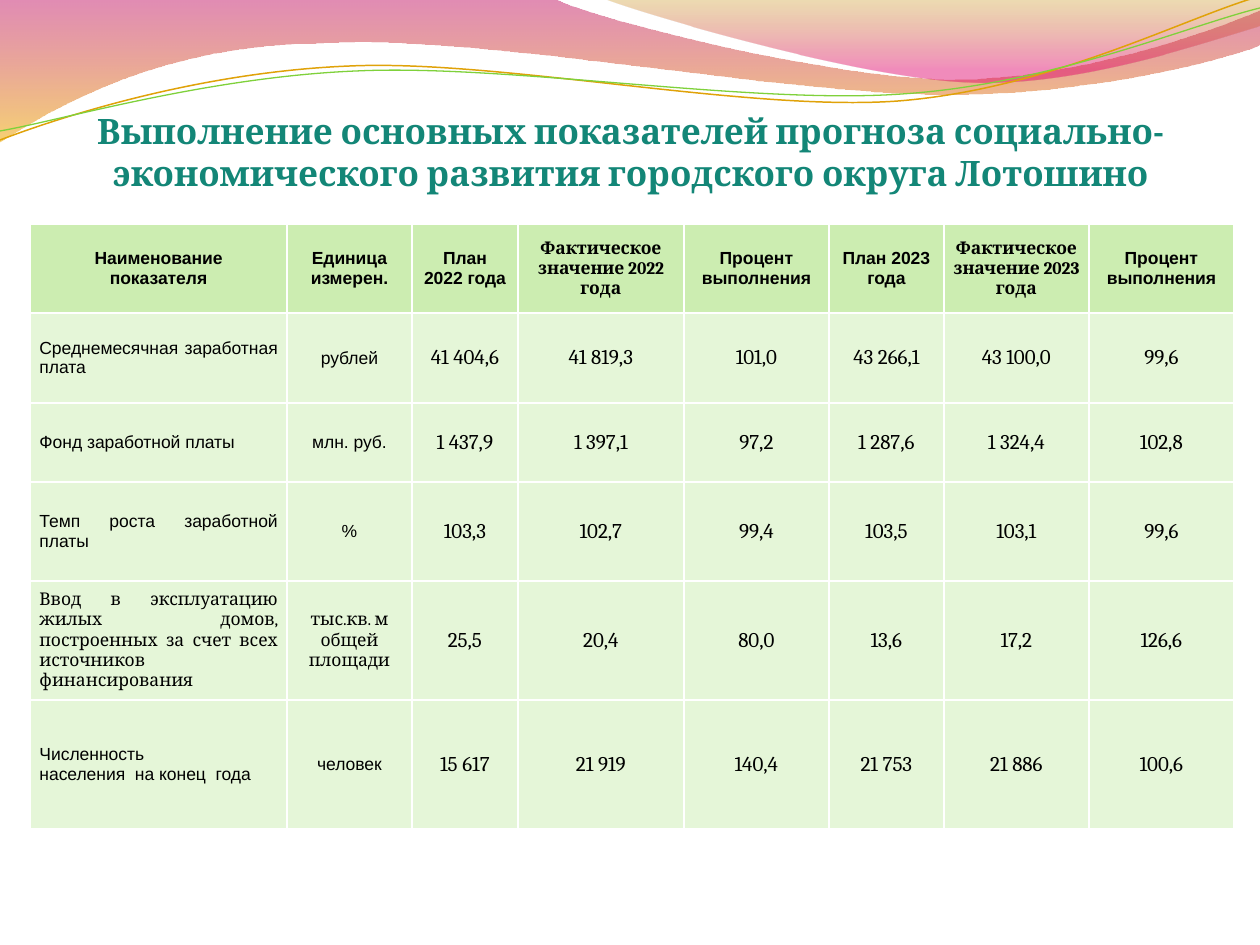
from lxml import etree
from pptx import Presentation
from pptx import util as u
from pptx.dml.color import RGBColor
from pptx.enum import text
from pptx.oxml.ns import qn

EMU_PER_PX = 914400 / 126
SERIF, SANS = "Cambria", "Arial"
CENTER, JUSTIFY = text.PP_ALIGN.CENTER, text.PP_ALIGN.JUSTIFY

# Waves: start point, then segments of one point (line) or three points (curve)
PINK_WAVE = [(0, -1), [(554, -1)],
             [(600, 21), (837, 79), (955, 79)],
             [(1075, 79), (1207, 33), (1260, 11)], [(1261, 45)],
             [(1239, 55), (1096, 96), (940, 94)],
             [(781, 94), (481, 35), (324, 43)],
             [(163, 44), (58, 105), (-1, 142)], [(0, -1)]]
GOLD_WAVE = [(604, -1),
             [(641, 14), (859, 78), (969, 82)],
             [(1079, 87), (1211, 40), (1260, 26)], [(1260, 0)], [(604, -1)]]
ORANGE_LINE = [(0, 140),
               [(60, 117), (199, 72), (349, 66)],
               [(498, 59), (747, 112), (898, 101)],
               [(1050, 89), (1182, 19), (1257, -3)]]
GREEN_LINE = [(0, 131),
              [(59, 121), (207, 77), (357, 71)],
              [(508, 64), (752, 105), (903, 94)],
              [(1053, 84), (1187, 26), (1260, 8)]]

# Table content
COLUMNS = [257, 125, 106, 166, 145, 115, 145, 145]
ROWS = [89, 90, 79, 99, 119, 129]
HEADER = ["Наименование\nпоказателя", "Единица\nизмерен.",
          "План 2022 года", "Фактическое значение 2022 года", "Процент выполнения",
          "План 2023 года", "Фактическое значение 2023 года", "Процент выполнения"]
INDICATORS = [
    ["Среднемесячная заработная плата", "рублей",
     "41 404,6", "41 819,3", "101,0", "43 266,1", "43 100,0", "99,6"],
    ["Фонд заработной платы", "млн. руб.",
     "1 437,9", "1 397,1", "97,2", "1 287,6", "1 324,4", "102,8"],
    ["Темп роста заработной платы", "%",
     "103,3", "102,7", "99,4", "103,5", "103,1", "99,6"],
    ["Ввод в эксплуатацию жилых домов, построенных за счет всех источников финансирования",
     "тыс.кв. м общей площади", "25,5", "20,4", "80,0", "13,6", "17,2", "126,6"],
    ["Численность\nнаселения  на конец  года", "человек",
     "15 617", "21 919", "140,4", "21 753", "21 886", "100,6"],
]
SERIF_LABEL_ROW = 4
ACTUAL_COLUMNS = (3, 6)


def px(value):
    return u.Emu(round(value * EMU_PER_PX))


def color(hex_code):
    return RGBColor.from_string(hex_code)


def bend_segments(wave, segments):
    """Turn each run of three points into one cubic curve."""
    outline = wave._element.find(".//" + qn("a:path"))
    steps = iter(outline.findall(qn("a:lnTo")))
    for segment in segments:
        first = next(steps)
        if len(segment) == 3:
            curve = etree.Element(qn("a:cubicBezTo"))
            first.addprevious(curve)
            for step in (first, next(steps), next(steps)):
                curve.append(step[0])
                outline.remove(step)


def add_outline(slide, outline, close):
    start, *segments = outline
    points = [(px(x), px(y)) for segment in segments for x, y in segment]
    builder = slide.shapes.build_freeform(px(start[0]), px(start[1]))
    builder.add_line_segments(points, close=close)
    wave = builder.convert_to_shape()
    bend_segments(wave, segments)
    wave.shadow.inherit = False
    return wave


def add_gradient_wave(slide, outline, stops):
    wave = add_outline(slide, outline, True)
    wave.line.fill.background()
    wave.fill.gradient()
    wave.fill.gradient_angle = 270
    for stop, (position, hex_code, opacity) in zip(wave.fill.gradient_stops, stops):
        stop.position = position
        stop.color.rgb = color(hex_code)
        tint = stop._gs.find(qn("a:srgbClr"))
        etree.SubElement(tint, qn("a:alpha"), val=str(opacity * 1000))


def add_wave_line(slide, outline, hex_code, width):
    wave = add_outline(slide, outline, False)
    wave.fill.background()
    wave.line.color.rgb = color(hex_code)
    wave.line.width = u.Pt(width)


def format_text(frame, font_name, size, hex_code, bold, align):
    for paragraph in frame.paragraphs:
        paragraph.alignment = align
        for run in paragraph.runs:
            run.font.name = font_name
            run.font.size = u.Pt(size)
            run.font.bold = bold
            run.font.color.rgb = color(hex_code)


def place_title(slide, wording):
    title = slide.shapes.title
    title.left, title.top, title.width, title.height = map(px, (25, 65, 1211, 129))
    frame = title.text_frame
    frame.text = wording
    frame.word_wrap = True
    frame.auto_size = text.MSO_AUTO_SIZE.NONE
    frame.vertical_anchor = text.MSO_ANCHOR.BOTTOM
    frame.margin_left = frame.margin_right = frame.margin_bottom = 0
    frame.margin_top = px(6)
    format_text(frame, SERIF, 20, "138677", True, CENTER)
    slide.shapes._spTree.append(title._element)  # in front of the waves


def cell_style(row, column):
    """Font, size and alignment by place in the table."""
    if row == 0:
        return (SERIF if column in ACTUAL_COLUMNS else SANS), 10, CENTER
    if column > 1:
        return SERIF, 12, CENTER
    label_font = SERIF if row == SERIF_LABEL_ROW else SANS
    return label_font, 10, (JUSTIFY if column == 0 else CENTER)


def fill_cell(cell, wording, row, column):
    cell.fill.solid()
    cell.fill.fore_color.rgb = color("E5F6D8" if row else "CCEDB1")
    cell.margin_left = cell.margin_right = u.Pt(5.4)
    cell.margin_top = cell.margin_bottom = 0
    cell.vertical_anchor = text.MSO_ANCHOR.MIDDLE
    cell.text_frame.text = wording
    font_name, size, align = cell_style(row, column)
    format_text(cell.text_frame, font_name, size, "000000", row == 0, align)


def add_indicator_table(slide):
    # The default table style draws the white grid and the thick header rule
    table = slide.shapes.add_table(len(ROWS), len(COLUMNS), px(30), px(224),
                                   px(sum(COLUMNS)), px(sum(ROWS))).table
    for column, width in zip(table.columns, COLUMNS):
        column.width = px(width)
    for row, height in zip(table.rows, ROWS):
        row.height = px(height)
    for r, wordings in enumerate([HEADER] + INDICATORS):
        for c, wording in enumerate(wordings):
            fill_cell(table.cell(r, c), wording, r, c)


def main():
    deck = Presentation()
    deck.slide_width, deck.slide_height = px(1260), px(945)
    slide = deck.slides.add_slide(deck.slide_layouts[5])

    # Decorative waves
    add_gradient_wave(slide, PINK_WAVE, [(0, "BD0059", 45), (1, "F0AB00", 55)])
    add_gradient_wave(slide, GOLD_WAVE, [(0, "C38B00", 30), (0.8, "E1006B", 45)])
    add_wave_line(slide, ORANGE_LINE, "E0A209", 0.85)
    add_wave_line(slide, GREEN_LINE, "7FD13B", 0.75)

    # Title and table
    place_title(slide, "Выполнение основных показателей прогноза "
                       "социально-экономического развития городского округа Лотошино")
    add_indicator_table(slide)

    deck.save("out.pptx")


if __name__ == "__main__":
    main()
